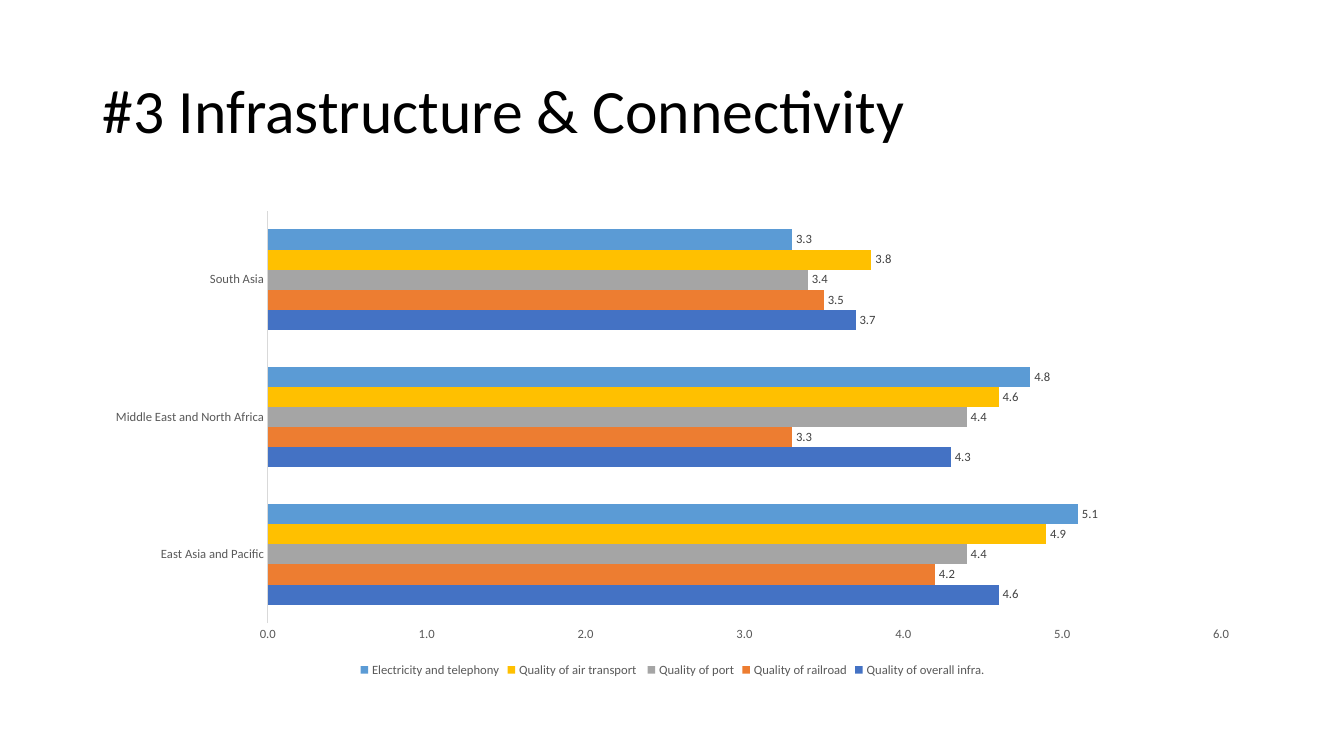
from dataclasses import dataclass

from pptx import Presentation
from pptx import util as u
from pptx.chart.data import CategoryChartData
from pptx.dml.color import RGBColor
from pptx.enum import chart as charts, text

TITLE = "#3 Infrastructure & Connectivity"
REGIONS = ["East Asia and Pacific", "Middle East and North Africa", "South Asia"]
INDICATORS = [
    ("Quality of overall infra.", (4.6, 4.3, 3.7), "4472C4"),
    ("Quality of railroad", (4.2, 3.3, 3.5), "ED7D31"),
    ("Quality of port", (4.4, 4.4, 3.4), "A5A5A5"),
    ("Quality of air transport ", (4.9, 4.6, 3.8), "FFC000"),
    ("Electricity and telephony", (5.1, 4.8, 3.3), "5B9BD5"),
]
NUMBER_FORMAT = "0.0"
LEFT, WIDTH = 0.92, 11.5
TITLE_TOP, TITLE_HEIGHT = 0.4, 1.45
CHART_TOP, CHART_HEIGHT = 2, 4.76


@dataclass(frozen=True)
class Theme:
    family: str = "Calibri"
    title_size: int = 44
    chart_size: int = 10
    label_size: int = 9
    ink: str = "000000"
    axis_text: str = "595959"
    value_text: str = "404040"
    axis_line: str = "D9D9D9"


theme = Theme()


def style_font(font, size, color):
    font.name = theme.family
    font.size = u.Pt(size)
    font.color.rgb = RGBColor.from_string(color)


def area(top, height):
    return [u.Inches(length) for length in (LEFT, top, WIDTH, height)]


def add_title(page):
    title = page.shapes.title
    title.left, title.top, title.width, title.height = area(TITLE_TOP, TITLE_HEIGHT)
    frame = title.text_frame
    frame.text = TITLE
    frame.vertical_anchor = text.MSO_ANCHOR.MIDDLE
    para = frame.paragraphs[0]
    para.alignment = text.PP_ALIGN.LEFT
    para.line_spacing = 0.9
    style_font(para.font, theme.title_size, theme.ink)


def style_axis(axis):
    axis.has_major_gridlines = False
    axis.major_tick_mark = axis.minor_tick_mark = charts.XL_TICK_MARK.NONE
    style_font(axis.tick_labels.font, theme.label_size, theme.axis_text)


def style_series(series, color):
    series.format.fill.solid()
    series.format.fill.fore_color.rgb = RGBColor.from_string(color)
    series.invert_if_negative = False
    labels = series.data_labels
    labels.show_value = True
    labels.number_format = NUMBER_FORMAT
    labels.number_format_is_linked = False
    labels.position = charts.XL_LABEL_POSITION.OUTSIDE_END
    style_font(labels.font, theme.label_size, theme.value_text)


def add_infrastructure_chart(page):
    data = CategoryChartData(number_format=NUMBER_FORMAT)
    data.categories = REGIONS
    for name, scores, _ in INDICATORS:
        data.add_series(name, scores)
    chart = page.shapes.add_chart(
        charts.XL_CHART_TYPE.BAR_CLUSTERED, *area(CHART_TOP, CHART_HEIGHT), data
    ).chart
    chart.has_title = False
    style_font(chart.font, theme.chart_size, theme.ink)

    chart.has_legend = True
    chart.legend.position = charts.XL_LEGEND_POSITION.BOTTOM
    chart.legend.include_in_layout = False
    style_font(chart.legend.font, theme.label_size, theme.axis_text)

    regions, scale = chart.category_axis, chart.value_axis
    for axis in (regions, scale):
        style_axis(axis)
    regions.format.line.width = u.Pt(0.75)
    regions.format.line.color.rgb = RGBColor.from_string(theme.axis_line)
    scale.format.line.fill.background()
    scale.minimum_scale, scale.maximum_scale, scale.major_unit = 0, 6, 1
    scale.tick_labels.number_format = NUMBER_FORMAT
    scale.tick_labels.number_format_is_linked = False

    plot = chart.plots[0]
    plot.gap_width = 182
    plot.overlap = 0
    plot.vary_by_categories = False
    for series, (_, _, color) in zip(plot.series, INDICATORS):
        style_series(series, color)


def main():
    deck = Presentation()
    deck.slide_width, deck.slide_height = u.Inches(13.33), u.Inches(7.5)
    page = deck.slides.add_slide(deck.slide_layouts.get_by_name("Title Only"))
    add_title(page)
    add_infrastructure_chart(page)
    deck.save("out.pptx")


if __name__ == "__main__":
    main()
